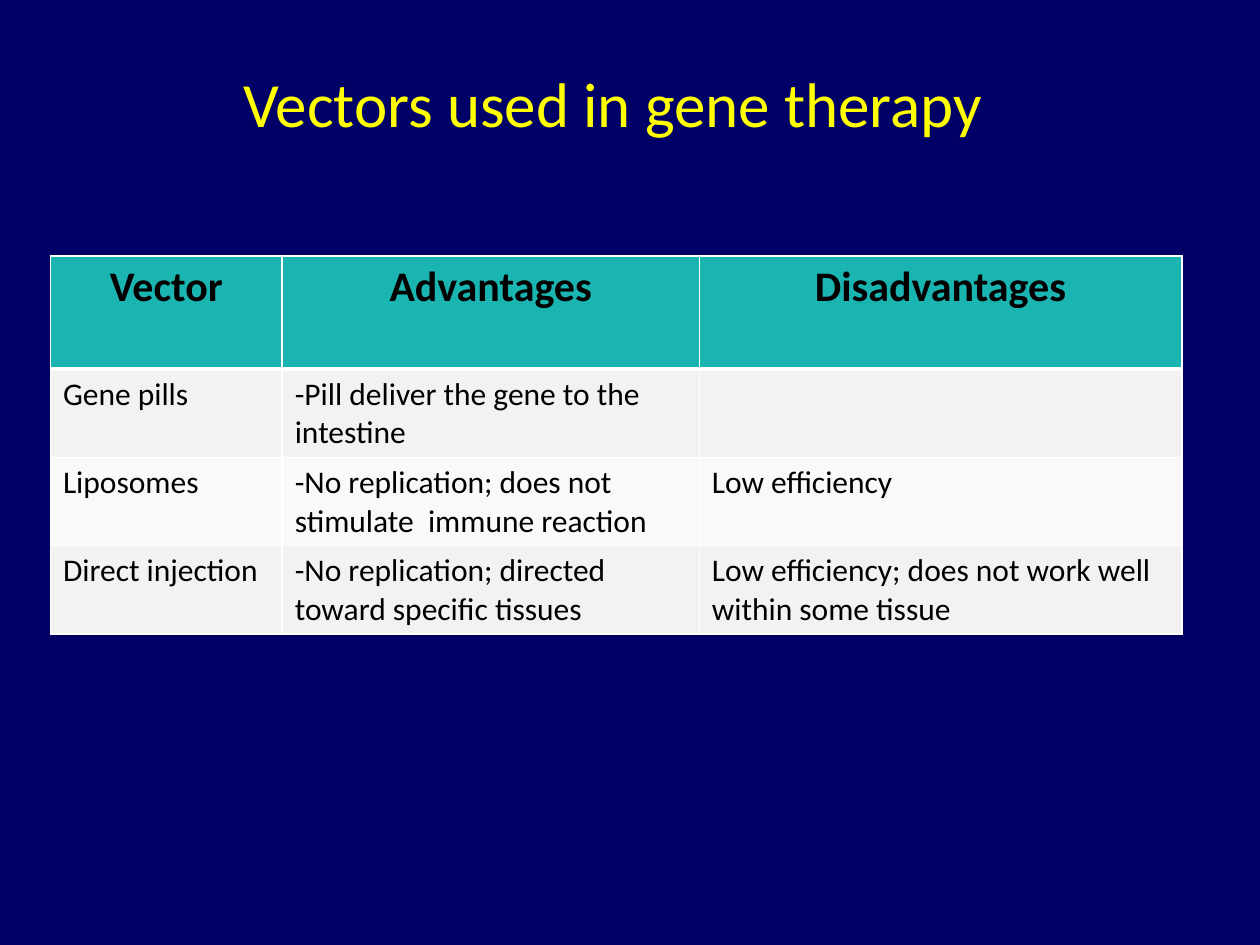
from lxml import etree
from pptx import Presentation
from pptx import util as u
from pptx.dml.color import RGBColor
from pptx.enum import text
from pptx.oxml import ns

HEADER = ["Vector", "Advantages", "Disadvantages"]
VECTORS = [
    ["Gene pills", "-Pill deliver the gene to the intestine", ""],
    ["Liposomes", "-No replication; does not stimulate  immune reaction", "Low efficiency"],
    ["Direct injection", "-No replication; directed toward specific tissues",
     "Low efficiency; does not work well within some tissue"],
]


def color(value):
    return RGBColor.from_string(value)


class SlideBuilder:
    font = "Calibri"
    background = "000066"
    title_color = "FFFF00"
    text_color = "000000"
    border_color = "FFFFFF"
    header_fill = "1BB5B1"
    row_fills = ("F2F2F2", "F9F9F9")

    def __init__(self, presentation):
        self.slide = presentation.slides.add_slide(presentation.slide_layouts[5])
        fill = self.slide.background.fill
        fill.solid()
        fill.fore_color.rgb = color(self.background)

    def format_paragraph(self, paragraph, size, font_color, alignment, bold=False):
        paragraph.alignment = alignment
        paragraph.font.name = self.font
        paragraph.font.size = u.Pt(size)
        paragraph.font.bold = bold
        paragraph.font.color.rgb = color(font_color)

    def title(self, wording, left, top, width, height):
        shape = self.slide.shapes.title
        shape.left, shape.top = u.Inches(left), u.Inches(top)
        shape.width, shape.height = u.Inches(width), u.Inches(height)
        frame = shape.text_frame
        frame.text = wording
        frame.word_wrap = False
        frame.auto_size = text.MSO_AUTO_SIZE.SHAPE_TO_FIT_TEXT
        frame.vertical_anchor = text.MSO_ANCHOR.TOP
        self.format_paragraph(frame.paragraphs[0], 36, self.title_color, text.PP_ALIGN.LEFT)

    def borders(self, cell, top, bottom):
        """Draw the four cell borders; top and bottom are widths in points."""
        properties = cell._tc.get_or_add_tcPr()
        widths = {"a:lnL": 1, "a:lnR": 1, "a:lnT": top, "a:lnB": bottom}
        for index, (side, width) in enumerate(widths.items()):
            line = etree.Element(ns.qn(side), w=str(u.Pt(width)))
            fill = etree.SubElement(line, ns.qn("a:solidFill"))
            etree.SubElement(fill, ns.qn("a:srgbClr"), val=self.border_color)
            properties.insert(index, line)

    def table(self, rows, left, top, column_widths, row_heights):
        """Add a table whose first row is the header."""
        table = self.slide.shapes.add_table(
            len(rows), len(column_widths), u.Inches(left), u.Inches(top),
            u.Inches(sum(column_widths)), u.Inches(sum(row_heights))).table
        for column, width in zip(table.columns, column_widths):
            column.width = u.Inches(width)
        for row_index, (values, height) in enumerate(zip(rows, row_heights)):
            table.rows[row_index].height = u.Inches(height)
            is_header = row_index == 0
            fill = self.header_fill if is_header else self.row_fills[(row_index - 1) % 2]
            for cell, value in zip(table.rows[row_index].cells, values):
                cell.text = value
                cell.fill.solid()
                cell.fill.fore_color.rgb = color(fill)
                self.borders(cell, top=3 if row_index == 1 else 1, bottom=3 if is_header else 1)
                self.format_paragraph(
                    cell.text_frame.paragraphs[0], 24 if is_header else 18, self.text_color,
                    text.PP_ALIGN.CENTER if is_header else text.PP_ALIGN.LEFT, is_header)


def main():
    presentation = Presentation()
    presentation.slide_width, presentation.slide_height = u.Inches(10), u.Inches(7.5)
    builder = SlideBuilder(presentation)
    builder.title("Vectors used in gene therapy", 1.83, 0.46, 6.12, 0.71)
    builder.table([HEADER] + VECTORS, 0.4, 2.03, [1.84, 3.31, 3.83], [0.9] + [0.7] * 3)
    presentation.save("out.pptx")


if __name__ == "__main__":
    main()
